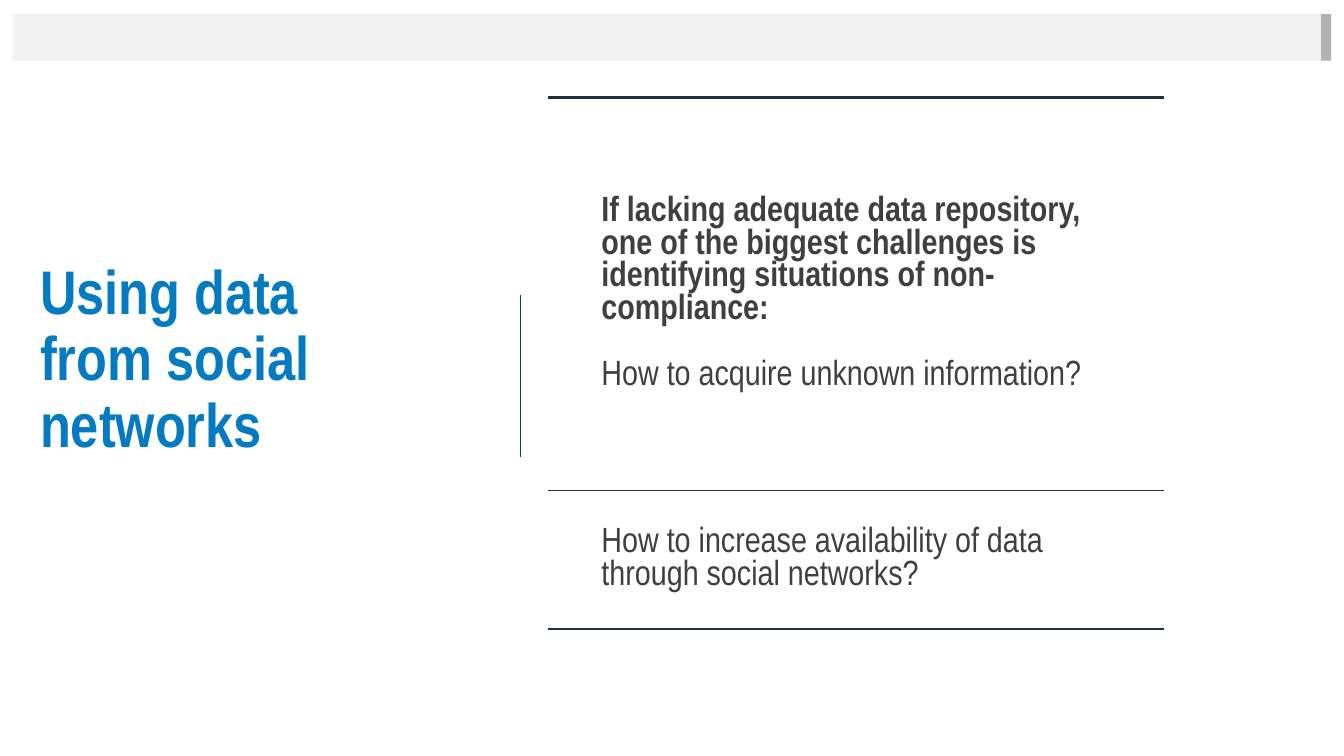
from dataclasses import dataclass
from lxml.etree import SubElement
from pptx import Presentation
from pptx.dml.color import RGBColor
from pptx.enum.shapes import MSO_CONNECTOR, MSO_SHAPE
from pptx.enum.text import MSO_ANCHOR
from pptx.oxml import parse_xml
from pptx.oxml.ns import nsdecls, qn
from pptx.util import Emu, Inches, Pt

WIDE, HIGH = Inches(13.33), Inches(7.5)
HUES = {
    "band": "F2F2F2",
    "tip": "B2B2B2",
    "split": "004775",
    "title": "047BC1",
    "rule": "1D3341",
    "body": "3F3F3F",
}
PLAIN = "{2D5ABB26-0587-4C30-8999-92F81FD0307C}"
FACE = "Arial Narrow"
TITLE = {"name": FACE, "size": Pt(44), "bold": True}
BODY = {"name": FACE, "size": Pt(25), "bold": False}
STRONG = BODY | {"bold": True}


@dataclass
class Box:
    left: float
    top: float
    width: float
    height: float

    def place(self) -> tuple[Emu, Emu, Emu, Emu]:
        return across(self.left), down(self.top), across(self.width), down(self.height)


@dataclass
class Block:
    box: Box
    hue: str


@dataclass
class Line:
    text: str
    form: dict
    hue: str
    pace: float = 1.0
    gap: float = 0


def across(share: float) -> Emu:
    return Emu(round(WIDE * share / 100))


def down(share: float) -> Emu:
    return Emu(round(HIGH * share / 100))


def tint(name: str) -> RGBColor:
    return RGBColor.from_string(HUES[name])


def draw_block(slide, block: Block) -> None:
    shape = slide.shapes.add_shape(MSO_SHAPE.RECTANGLE, *block.box.place())
    shape.shadow.inherit = False
    shape.fill.solid()
    shape.fill.fore_color.rgb = tint(block.hue)
    shape.line.fill.background()


def draw_split(slide, left: float, top: float, end: float) -> None:
    line = slide.shapes.add_connector(
        MSO_CONNECTOR.STRAIGHT, across(left), down(top), across(left), down(end)
    )
    line.line.color.rgb = tint("split")
    line.line.width = Pt(0.5)
    SubElement(line._element.spPr, qn("a:effectLst"))


def write(frame, lines: list[Line]) -> None:
    frame.word_wrap = True
    for i, line in enumerate(lines):
        para = frame.add_paragraph() if i else frame.paragraphs[0]
        para.line_spacing = line.pace
        if line.gap:
            para.space_before = Pt(line.gap)
        run = para.add_run()
        run.text = line.text
        for key, value in line.form.items():
            setattr(run.font, key, value)
        run.font.color.rgb = tint(line.hue)


def draw_title(slide, box: Box, line: Line) -> None:
    frame = slide.shapes.add_textbox(*box.place()).text_frame
    frame.vertical_anchor = MSO_ANCHOR.MIDDLE
    write(frame, [line])


def edge(cell, sides: dict[str, float]) -> None:
    props = cell._tc.get_or_add_tcPr()
    for i, (side, width) in enumerate(sides.items()):
        props.insert(i, parse_xml(
            f'<a:{side} {nsdecls("a")} w="{Pt(width)}"><a:solidFill>'
            f'<a:srgbClr val="{HUES["rule"]}"/></a:solidFill></a:{side}>'
        ))


def draw_table(slide, box: Box, cols: list[float], rows: list[float],
               texts: list[list[Line]], rules: list[float]) -> None:
    table = slide.shapes.add_table(len(rows), len(cols), *box.place()).table
    table.first_row = table.horz_banding = False
    table._tbl.tblPr.find(qn("a:tableStyleId")).text = PLAIN
    for col, share in zip(table.columns, cols):
        col.width = across(share)
    form = {"vertical_anchor": MSO_ANCHOR.MIDDLE}
    form |= {f"margin_{side}": Inches(0.15) for side in ("left", "right", "top", "bottom")}
    for r, share in enumerate(rows):
        table.rows[r].height = down(share)
        for cell in table.rows[r].cells:
            cell.fill.background()
            edge(cell, {"lnT": rules[r], "lnB": rules[r + 1]})
        cell = table.cell(r, 1)
        for key, value in form.items():
            setattr(cell, key, value)
        write(cell.text_frame, texts[r])


def main() -> None:
    deck = Presentation()
    deck.slide_width, deck.slide_height = WIDE, HIGH
    slide = deck.slides.add_slide(deck.slide_layouts[6])
    for block in (
        Block(Box(0.95, 1.87, 98.12, 6.17), "band"),
        Block(Box(98.3, 1.87, 0.75, 6.17), "tip"),
    ):
        draw_block(slide, block)
    draw_split(slide, 38.71, 39.07, 60.4)
    draw_title(slide, Box(2.25, 33.07, 24.16, 29.33),
               Line("Using data from social networks", TITLE, "title", 0.9))
    cols, rows = [2.85, 40.14, 2.85], [52, 18.27]
    texts = [
        [
            Line("If lacking adequate data repository, one of the biggest challenges "
                 "is identifying situations of non-compliance:", STRONG, "body"),
            Line("How to acquire unknown information?", BODY, "body", gap=23.5),
        ],
        [Line("How to increase availability of data through social networks?",
              BODY, "body")],
    ]
    draw_table(slide, Box(40.78, 12.93, sum(cols), sum(rows)), cols, rows, texts, [2.25, 1, 1])
    deck.save("out.pptx")


if __name__ == "__main__":
    main()
